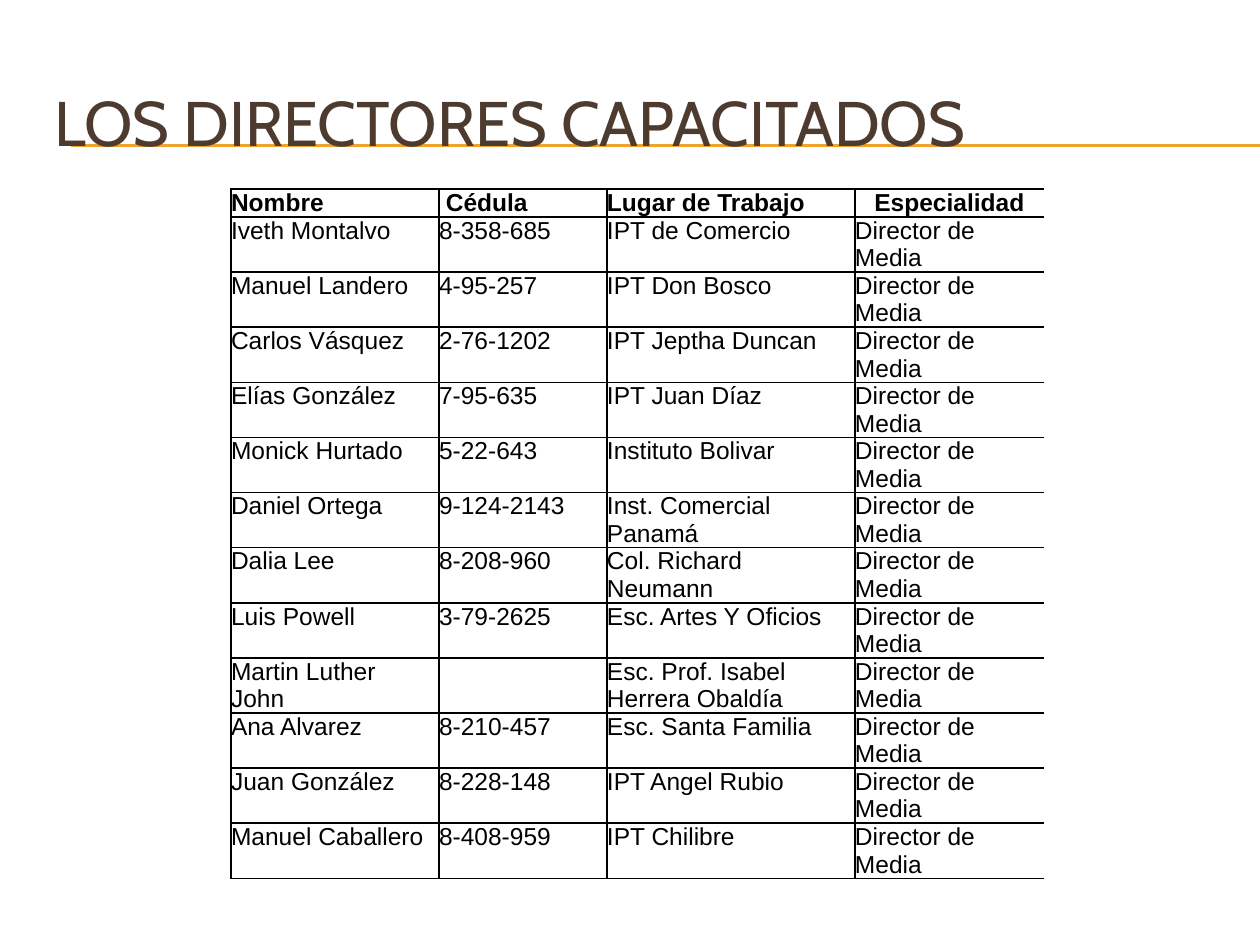
from lxml import etree
from pptx import Presentation
from pptx.dml.color import RGBColor
from pptx.enum.shapes import MSO_CONNECTOR
from pptx.enum.text import MSO_ANCHOR, MSO_AUTO_SIZE, PP_ALIGN
from pptx.oxml.ns import qn
from pptx.util import Emu, Pt

STRAIGHT = MSO_CONNECTOR.STRAIGHT
MIDDLE = MSO_ANCHOR.MIDDLE
NO_FIT = MSO_AUTO_SIZE.NONE
LEFT, CENTER = PP_ALIGN.LEFT, PP_ALIGN.CENTER
PX_PER_INCH = 126
BLACK, BROWN, AMBER = "000000", "4E3B30", "F0A22E"
COLUMN_WIDTHS = [208, 168, 248, 189]
HEADER_HEIGHT, ROW_HEIGHT = 28, 55
HEADINGS = ["Nombre", " Cédula", "Lugar de Trabajo", "Especialidad"]
SPECIALTY = "Director de Media"
DIRECTORS = [
    ("Iveth Montalvo", "8-358-685", "IPT de Comercio"),
    ("Manuel Landero", "4-95-257", "IPT Don Bosco"),
    ("Carlos Vásquez", "2-76-1202", "IPT Jeptha Duncan"),
    ("Elías González", "7-95-635", "IPT Juan Díaz"),
    ("Monick Hurtado", "5-22-643", "Instituto Bolivar"),
    ("Daniel Ortega", "9-124-2143", "Inst. Comercial\nPanamá"),
    ("Dalia Lee", "8-208-960", "Col. Richard Neumann"),
    ("Luis Powell", "3-79-2625", "Esc. Artes Y Oficios"),
    ("Martin Luther\nJohn", "", "Esc. Prof. Isabel Herrera Obaldía"),
    ("Ana Alvarez", "8-210-457", "Esc. Santa Familia"),
    ("Juan González", "8-228-148", "IPT Angel Rubio"),
    ("Manuel Caballero", "8-408-959", "IPT Chilibre"),
]


def px(length):
    """Turn px into EMU."""
    return Emu(round(length * 914400 / PX_PER_INCH))


def color(value):
    """Turn a hex string into a colour."""
    return RGBColor.from_string(value)


def add_span(para, text, font, size, ink, bold=False):
    """Add one formatted run to a paragraph."""
    span = para.add_run()
    span.text = text
    span.font.name = font
    span.font.size = Pt(size)
    span.font.bold = bold
    span.font.color.rgb = color(ink)


def add_title(page, left, top, width, height):
    """Place the title over its double rule."""
    title = page.shapes.title
    title.left, title.top = px(left), px(top)
    title.width, title.height = px(width), px(height)
    frame = title.text_frame
    frame.word_wrap = True
    frame.auto_size = NO_FIT
    frame.vertical_anchor = MIDDLE
    para = frame.paragraphs[0]
    para.alignment = LEFT
    add_span(para, "LOS DIRECTORES CAPACITADOS", "Cabin", 36, BROWN)
    for offset in (82, 83):
        rule = page.shapes.add_connector(
            STRAIGHT, px(left + 29), px(top + offset), px(1260), px(top + offset))
        rule.line.color.rgb = color(AMBER)
        rule.line.width = Pt(0.75)
        etree.SubElement(rule.element.spPr, qn("a:effectLst"))
        title.element.addprevious(rule.element)


def set_borders(cell, open_right):
    """Draw black cell borders, leaving the right side open if asked."""
    properties = cell._tc.get_or_add_tcPr()
    for side in "LRTB":
        line = etree.SubElement(properties, qn(f"a:ln{side}"), w=str(Pt(1)))
        if side == "R" and open_right:
            etree.SubElement(line, qn("a:noFill"))
        else:
            fill = etree.SubElement(line, qn("a:solidFill"))
            etree.SubElement(fill, qn("a:srgbClr"), val=BLACK)


def fill_cell(cell, text, bold, alignment, open_right):
    """Write and format one table cell."""
    cell.margin_left = cell.margin_right = cell.margin_top = cell.margin_bottom = 0
    set_borders(cell, open_right)
    cell.fill.background()
    frame = cell.text_frame
    for index, words in enumerate(text.split("\n")):
        para = frame.add_paragraph() if index else frame.paragraphs[0]
        para.alignment = alignment
        if words:
            add_span(para, words, "Arial", 14, BLACK, bold)


def add_directors(page, left, top):
    """Build the table of directors from its top left corner."""
    rows = [HEADINGS] + [(*director, SPECIALTY) for director in DIRECTORS]
    last = len(HEADINGS) - 1
    height = HEADER_HEIGHT + ROW_HEIGHT * len(DIRECTORS)
    table = page.shapes.add_table(
        len(rows), len(HEADINGS), px(left), px(top),
        px(sum(COLUMN_WIDTHS)), px(height)).table
    table.first_row = table.horz_banding = False
    for column, width in zip(table.columns, COLUMN_WIDTHS):
        column.width = px(width)
    for r, values in enumerate(rows):
        header = r == 0
        table.rows[r].height = px(HEADER_HEIGHT if header else ROW_HEIGHT)
        for c, text in enumerate(values):
            alignment = CENTER if header and c == last else LEFT
            fill_cell(table.cell(r, c), text, header, alignment, c == last)


def main():
    """Build the slide and save it."""
    deck = Presentation()
    deck.slide_width, deck.slide_height = px(1260), px(945)
    page = deck.slides.add_slide(deck.slide_layouts[5])
    add_title(page, 42, 63, 1197, 116)
    add_directors(page, 231, 189)
    deck.save("out.pptx")


if __name__ == "__main__":
    main()
